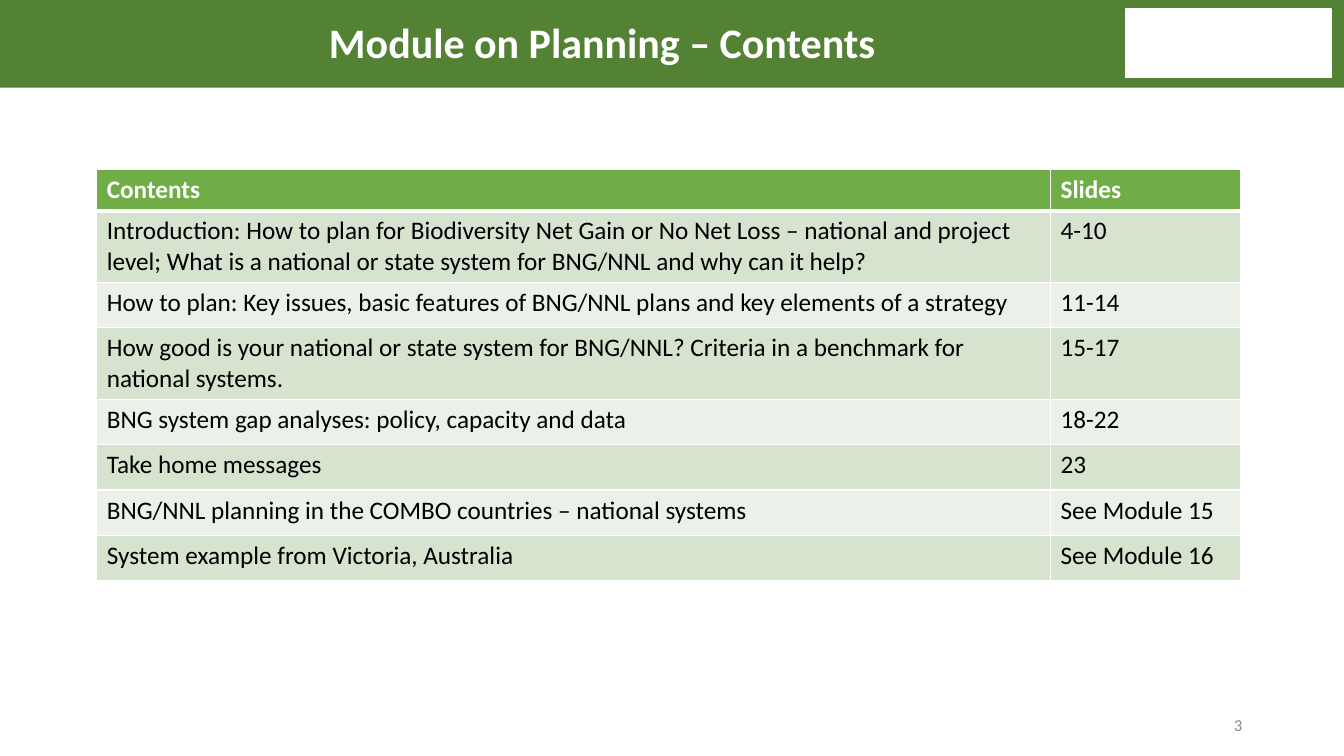
from lxml.etree import SubElement
from pptx import Presentation
from pptx.dml.color import RGBColor
from pptx.enum.shapes import MSO_SHAPE
from pptx.enum.text import MSO_ANCHOR as Anchor, MSO_AUTO_SIZE as AutoSize, PP_ALIGN as Align
from pptx.oxml.ns import qn
from pptx.util import Inches, Pt

WHITE = RGBColor(0xFF, 0xFF, 0xFF)
BLACK = RGBColor(0x00, 0x00, 0x00)
GREY = RGBColor(0x8C, 0x8C, 0x8C)
BANNER_GREEN = RGBColor(0x54, 0x82, 0x35)
HEADER_GREEN = RGBColor(0x70, 0xAD, 0x47)
ROW_TINTS = (RGBColor(0xD5, 0xE3, 0xCF), RGBColor(0xEB, 0xF1, 0xE9))

SLIDE_SIZE = (13.33, 7.5)
COLUMN_WIDTHS = (9.46, 1.88)
HEADER_HEIGHT, ONE_LINE, TWO_LINES = 0.41, 0.45, 0.7

TITLE_FONT = {"name": "Calibri", "size": Pt(30), "bold": True}
HEADER_FONT = {"name": "Calibri", "size": Pt(18), "bold": True}
BODY_FONT = {"name": "Calibri", "size": Pt(18), "bold": False}
NUMBER_FONT = {"name": "Calibri", "size": Pt(12), "bold": False}

HEADINGS = ("Contents", "Slides")
SECTIONS = (
    ("Introduction: How to plan for Biodiversity Net Gain or No Net Loss – national and project "
     "level; What is a national or state system for BNG/NNL and why can it help?", "4-10", TWO_LINES),
    ("How to plan: Key issues, basic features of BNG/NNL plans and key elements of a strategy",
     "11-14", ONE_LINE),
    ("How good is your national or state system for BNG/NNL? Criteria in a benchmark for "
     "national systems.", "15-17", TWO_LINES),
    ("BNG system gap analyses: policy, capacity and data", "18-22", ONE_LINE),
    ("Take home messages", "23", ONE_LINE),
    ("BNG/NNL planning in the COMBO countries – national systems", "See Module 15", ONE_LINE),
    ("System example from Victoria, Australia", "See Module 16", ONE_LINE),
)


def write(frame, text, font, color, align=Align.LEFT):
    frame.text = text
    paragraph = frame.paragraphs[0]
    paragraph.alignment = align
    run_font = paragraph.runs[0].font
    for attribute, value in font.items():
        setattr(run_font, attribute, value)
    run_font.color.rgb = color
    return paragraph


def add_block(slide, box, color, outlined=False):
    block = slide.shapes.add_shape(MSO_SHAPE.RECTANGLE, *map(Inches, box))
    block.shadow.inherit = False
    block.fill.solid()
    block.fill.fore_color.rgb = color
    if outlined:
        block.line.color.rgb = color
        block.line.width = Pt(1)
    else:
        block.line.fill.background()


def set_title(slide, text, box):
    """Fill the title placeholder and bring it in front of the banner."""
    title = slide.shapes.title
    title.left, title.top, title.width, title.height = map(Inches, box)
    paragraph = write(title.text_frame, text, TITLE_FONT, WHITE, Align.CENTER)
    paragraph.line_spacing = 0.9
    title.text_frame.vertical_anchor = Anchor.MIDDLE
    title.text_frame.auto_size = AutoSize.NONE
    slide.shapes._spTree.append(title._element)


def add_slide_number(slide, number, box):
    frame = slide.shapes.add_textbox(*map(Inches, box)).text_frame
    frame.word_wrap = True
    frame.vertical_anchor = Anchor.MIDDLE
    write(frame, number, NUMBER_FONT, GREY, Align.RIGHT)


def set_borders(cell, bottom):
    """Draw white cell borders, with the bottom one in the given points."""
    properties = cell._tc.get_or_add_tcPr()
    for index, (side, width) in enumerate((("L", 1), ("R", 1), ("T", 1), ("B", bottom))):
        border = SubElement(properties, qn(f"a:ln{side}"), w=str(Pt(width)))
        fill = SubElement(border, qn("a:solidFill"))
        SubElement(fill, qn("a:srgbClr"), val=str(WHITE))
        properties.insert(index, border)


def fill_row(table, index, texts, height, tint, font, color, bottom=1):
    table.rows[index].height = Inches(height)
    for cell, text in zip(table.rows[index].cells, texts):
        cell.fill.solid()
        cell.fill.fore_color.rgb = tint
        set_borders(cell, bottom)
        write(cell.text_frame, text, font, color)


def add_contents_table(slide, left, top):
    height = HEADER_HEIGHT + sum(section[-1] for section in SECTIONS)
    table = slide.shapes.add_table(
        len(SECTIONS) + 1, len(HEADINGS),
        *map(Inches, (left, top, sum(COLUMN_WIDTHS), height))).table
    for column, width in zip(table.columns, COLUMN_WIDTHS):
        column.width = Inches(width)
    fill_row(table, 0, HEADINGS, HEADER_HEIGHT, HEADER_GREEN, HEADER_FONT, WHITE, bottom=3)
    for index, (topic, pages, row_height) in enumerate(SECTIONS, start=1):
        tint = ROW_TINTS[(index - 1) % 2]
        fill_row(table, index, (topic, pages), row_height, tint, BODY_FONT, BLACK,)


def main():
    presentation = Presentation()
    presentation.slide_width, presentation.slide_height = map(Inches, SLIDE_SIZE)
    slide = presentation.slides.add_slide(presentation.slide_layouts.get_by_name("Title Only"))
    add_slide_number(slide, "3", (11.54, 7.04, 0.88, 0.31))
    add_block(slide, (0, -0.03, SLIDE_SIZE[0], 0.9), BANNER_GREEN)
    add_block(slide, (11.17, 0.09, 2.03, 0.68), WHITE, outlined=True)
    set_title(slide, "Module on Planning – Contents", (0.8, 0, 10.35, 0.9))
    add_contents_table(slide, 0.96, 1.68)
    presentation.save("out.pptx")


if __name__ == "__main__":
    main()
